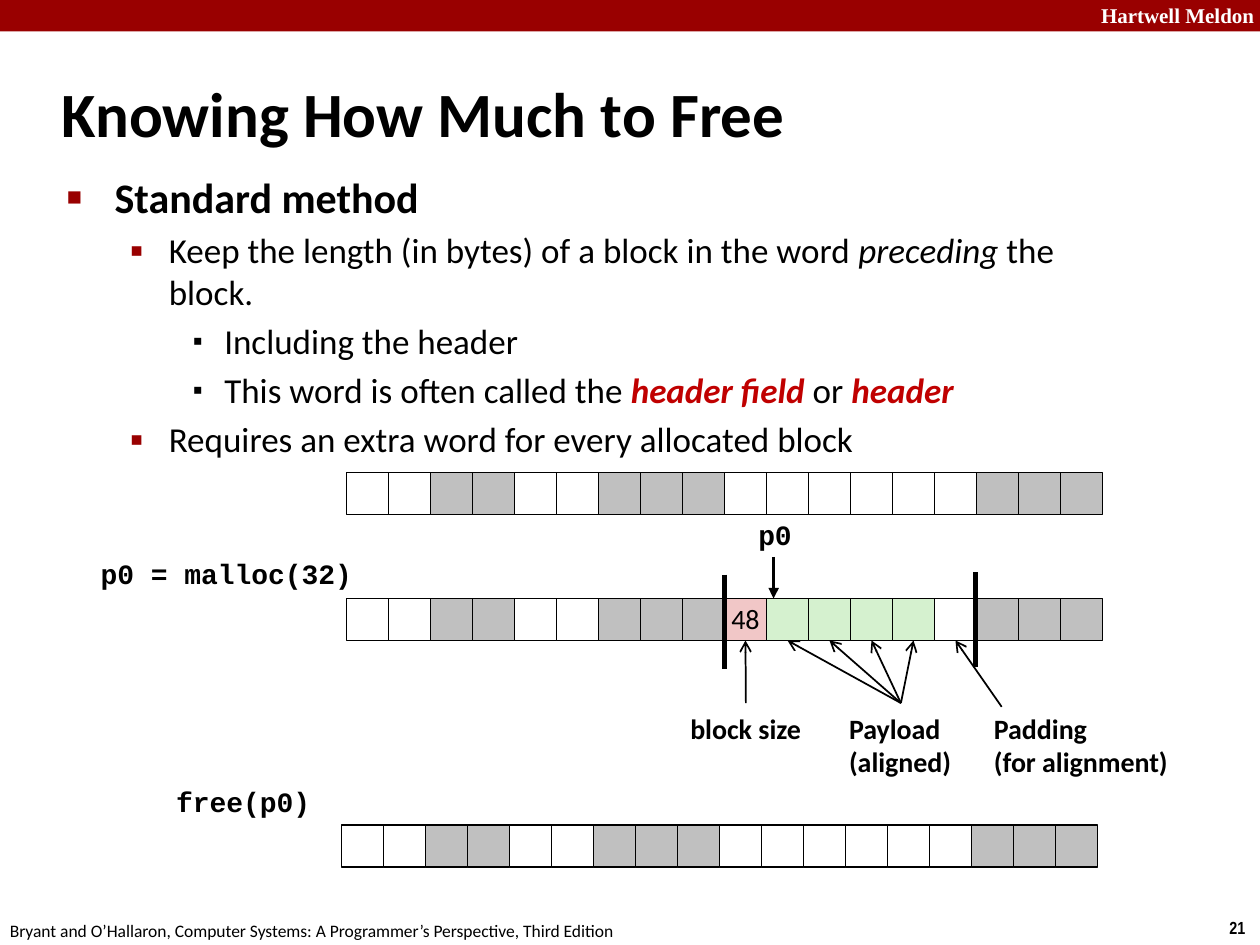
from typing import NamedTuple

from lxml import etree
from pptx import Presentation
from pptx.dml.color import RGBColor
from pptx.enum import shapes, text
from pptx.oxml import ns
from pptx.util import Inches, Pt

COLORS = {
    "black": "000000", "white": "FFFFFF", "banner": "990000", "accent": "C00000",
    "free": "FFFFFF", "used": "C0C0C0", "edge": "BFBFBF",
    "header": "F1C7C7", "payload": "D5F1CF",
}
CELL_KINDS = {".": "free", "#": "used", "e": "edge", "H": "header", "P": "payload"}
CELL = 1 / 3
MIDDLE, BOTTOM = text.MSO_ANCHOR.MIDDLE, 2

CODE = {"name": "Courier New", "size": Pt(16), "bold": True}
LABEL = {"name": "Calibri", "size": Pt(16), "bold": True}


class Caption(NamedTuple):
    content: str
    left: float
    top: float
    width: float
    height: float
    font: dict
    color: str = "black"
    spacing: float = 1.0


class HeapRow(NamedTuple):
    left: float
    top: float
    cells: str


class Line(NamedTuple):
    start: tuple
    end: tuple
    width: float
    head: str = ""


class Level(NamedTuple):
    margin: float
    hanging: float
    bullet: str
    bullet_color: str
    bullet_percent: int
    font: dict


class Bullet(NamedTuple):
    level: int
    runs: list


BODY_FONT = {"name": "Calibri", "size": Pt(20), "bold": False}
LEVELS = [
    Level(0.38, 0.38, "■", "banner", 60, {"name": "Calibri", "size": Pt(24), "bold": True}),
    Level(0.81, 0.31, "▪", "banner", 110, BODY_FONT),
    Level(1.25, 0.25, "▪", "black", 80, BODY_FONT),
]
EMPHASIS = {"bold": True, "italic": True}
BULLETS = [
    Bullet(0, [("Standard method", {}, "black")]),
    Bullet(1, [("Keep the length (in bytes) of a block in the word ", {}, "black"),
               ("preceding", {"italic": True}, "black"), (" the block.", {}, "black")]),
    Bullet(2, [("Including the header", {}, "black")]),
    Bullet(2, [("This word is often called the ", {}, "black"),
               ("header field ", EMPHASIS, "accent"), ("or ", {}, "black"),
               ("header", EMPHASIS, "accent")]),
    Bullet(1, [("Requires an extra word for every allocated block", {}, "black")]),
]
CAPTIONS = [
    Caption("Hartwell Meldon", 8.64, -0.03, 1.43, 0.3,
            {"name": "Times New Roman", "size": Pt(12), "bold": True}, "white"),
    Caption("21", 9.66, 7.23, 0.34, 0.27,
            {"name": "Arial Narrow", "size": Pt(10), "bold": True}),
    Caption("Bryant and O’Hallaron, Computer Systems: A Programmer’s Perspective, Third Edition",
            -0.02, 7.25, 5.08, 0.27, {"name": "Calibri", "size": Pt(10)}),
    Caption("p0 = malloc(32)", 0.7, 4.39, 2.22, 0.36, CODE, spacing=0.94),
    Caption("p0", 5.92, 4.08, 0.47, 0.35, CODE, spacing=0.94),
    Caption("free(p0)", 1.3, 6.2, 1.28, 0.36, CODE, spacing=0.94),
    Caption("block size", 5.38, 5.61, 1.09, 0.37, LABEL, spacing=0.98),
    Caption("Payload\v(aligned)", 6.64, 5.61, 1.02, 0.63, LABEL, spacing=0.98),
    Caption("Padding\n(for alignment)", 7.79, 5.61, 1.6, 0.63, LABEL, spacing=0.98),
]
BEFORE = HeapRow(2.75, 3.75, "..##..###......e##")
ALLOCATED = HeapRow(2.75, 4.75, "..##..###HPPPP.e##")
FREED = HeapRow(2.71, 6.55, BEFORE.cells)
MARKS = [
    Line((7.74, 4.54), (7.74, 5.29), 3),
    Line((5.75, 4.56), (5.75, 5.31), 3),
    Line((6.14, 4.42), (6.14, 4.75), 2, "triangle"),
]
HEADER_INDEX = ALLOCATED.cells.index("H")
# Index of the cell pointed at -> where its arrow starts
POINTERS = {HEADER_INDEX: (5.92, 5.58),
            **{HEADER_INDEX + i: (7.15, 5.58) for i in range(1, 5)},
            HEADER_INDEX + 5: (7.95, 5.61)}


def rgb(color: str) -> RGBColor:
    return RGBColor.from_string(COLORS[color])


def style_font(font, values: dict, color: str) -> None:
    for attribute, value in values.items():
        setattr(font, attribute, value)
    font.color.rgb = rgb(color)


def place(shape, *box: float) -> None:
    for attribute, value in zip(("left", "top", "width", "height"), box):
        setattr(shape, attribute, Inches(value))


def add_rectangle(parent, box: tuple, color: str):
    rectangle = parent.add_shape(shapes.MSO_SHAPE.RECTANGLE, *map(Inches, box))
    rectangle.shadow.inherit = False
    rectangle.fill.solid()
    rectangle.fill.fore_color.rgb = rgb(color)
    return rectangle


def add_row(parent, row: HeapRow) -> list:
    cells = []
    for i, kind in enumerate(row.cells):
        cell = add_rectangle(parent, (row.left + i * CELL, row.top, CELL, CELL), CELL_KINDS[kind])
        cell.line.color.rgb = rgb("black")
        cell.line.width = Pt(1)
        cells.append(cell)
    return cells


def add_line(parent, line: Line):
    connector = parent.add_connector(
        shapes.MSO_CONNECTOR.STRAIGHT, *map(Inches, line.start + line.end))
    connector.line.color.rgb = rgb("black")
    connector.line.width = Pt(line.width)
    if line.head:
        etree.SubElement(connector.line._get_or_add_ln(), ns.qn("a:tailEnd"), type=line.head)
    etree.SubElement(connector._element.spPr, ns.qn("a:effectLst"))
    return connector


def add_caption(parent, caption: Caption) -> None:
    frame = parent.add_textbox(*map(Inches, caption[1:5])).text_frame
    frame.word_wrap = False
    frame.text = caption.content
    for paragraph in frame.paragraphs:
        paragraph.line_spacing = caption.spacing
        for run in paragraph.runs:
            style_font(run.font, caption.font, caption.color)


def set_bullet(paragraph, level: Level) -> None:
    properties = paragraph._p.get_or_add_pPr()
    properties.set("marL", str(Inches(level.margin)))
    properties.set("indent", str(-Inches(level.hanging)))
    color = etree.SubElement(properties, ns.qn("a:buClr"))
    etree.SubElement(color, ns.qn("a:srgbClr"), val=COLORS[level.bullet_color])
    etree.SubElement(properties, ns.qn("a:buSzPct"), val=str(level.bullet_percent * 1000))
    etree.SubElement(properties, ns.qn("a:buChar"), char=level.bullet)


def fill_body(body) -> None:
    frame = body.text_frame
    frame.auto_size = text.MSO_AUTO_SIZE.NONE
    for i, bullet in enumerate(BULLETS):
        paragraph = frame.add_paragraph() if i else frame.paragraphs[0]
        paragraph.level = bullet.level
        level = LEVELS[bullet.level]
        set_bullet(paragraph, level)
        for content, emphasis, color in bullet.runs:
            run = paragraph.add_run()
            run.text = content
            style_font(run.font, level.font | emphasis, color)


def main() -> None:
    deck = Presentation()
    deck.slide_width, deck.slide_height = Inches(10), Inches(7.5)
    slide = deck.slides.add_slide(deck.slide_layouts[1])
    canvas = slide.shapes

    title, body = canvas.title, slide.placeholders[1]
    place(title, 0.39, 0.48, 8.3, 0.83)
    title.text_frame.text = "Knowing How Much to Free"
    title.text_frame.auto_size = text.MSO_AUTO_SIZE.NONE
    title.text_frame.vertical_anchor = MIDDLE
    heading = title.text_frame.paragraphs[0]
    heading.alignment = text.PP_ALIGN.LEFT
    style_font(heading.runs[0].font, {"name": "Calibri", "size": Pt(36), "bold": True}, "black")
    place(body, 0.43, 1.31, 8.64, 5.62)
    fill_body(body)

    add_rectangle(canvas, (0, 0, 10, 0.25), "banner").line.fill.background()
    add_row(canvas, BEFORE)
    allocated = add_row(canvas, ALLOCATED)
    add_row(canvas.add_group_shape().shapes, FREED)

    size = allocated[HEADER_INDEX].text_frame
    size.text = "48"
    size.word_wrap = False
    size.vertical_anchor = MIDDLE
    size.paragraphs[0].alignment = text.PP_ALIGN.CENTER
    size.paragraphs[0].line_spacing = 0.98
    style_font(size.paragraphs[0].runs[0].font, LABEL | {"bold": False}, "black")

    for mark in MARKS:
        add_line(canvas, mark)
    for index, start in POINTERS.items():
        pointer = add_line(canvas, Line(start, start, 1, "arrow"))
        pointer.end_connect(allocated[index], BOTTOM)
    for caption in CAPTIONS:
        add_caption(canvas, caption)
    deck.save("out.pptx")


if __name__ == "__main__":
    main()
